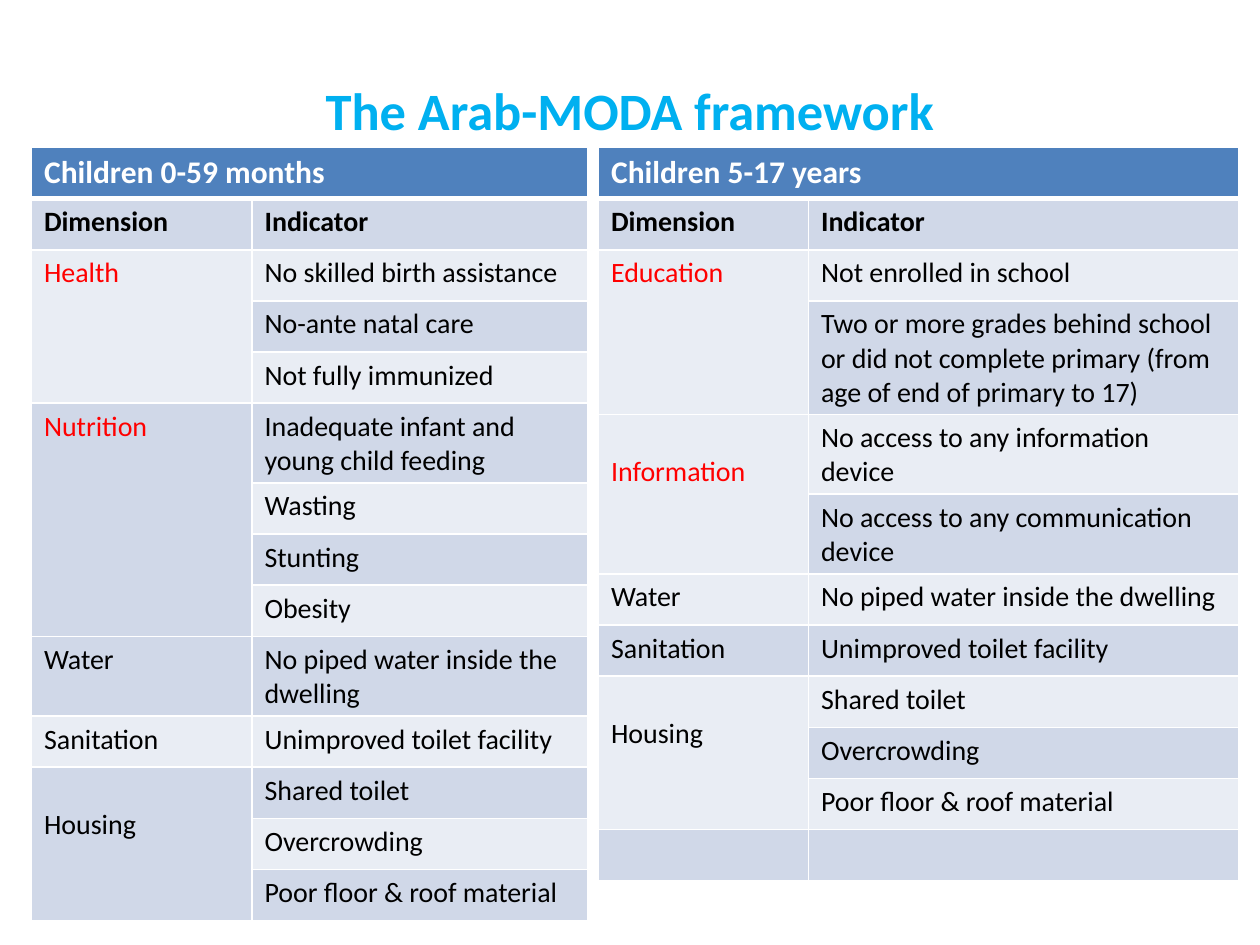
from lxml import etree
from pptx import Presentation
from pptx.dml.color import RGBColor
from pptx.enum.text import MSO_ANCHOR, PP_ALIGN
from pptx.oxml.ns import qn
from pptx.util import Pt

CENTER, LEFT = PP_ALIGN.CENTER, PP_ALIGN.LEFT
MIDDLE = MSO_ANCHOR.MIDDLE

FONT = "Calibri"
BLACK, WHITE, RED, SKY = "000000", "FFFFFF", "FF0000", "00B0F0"
HEADER_FILL = "4F81BD"
BAND_FILLS = ("E9EDF4", "D0D8E8")  # even rows, odd rows

TITLE = "The Arab-MODA framework"
COLUMN_HEADS = ("Dimension", "Indicator")
HOUSING = ["Shared toilet", "Overcrowding", "Poor floor & roof material"]
WATER = ["No piped water inside the dwelling"]
SANITATION = ["Unimproved toilet facility"]

# Each dimension: name, colour, lines it is lowered by, indicators
AGE_GROUPS = [
    {
        "heading": "Children 0-59 months",
        "left": 18, "widths": (126, 192),
        "dimensions": [
            ("Health", RED, 0, ["No skilled birth assistance",
                                "No-ante natal care",
                                "Not fully immunized"]),
            ("Nutrition", RED, 0, ["Inadequate infant and young child feeding",
                                   "Wasting", "Stunting", "Obesity"]),
            ("Water", BLACK, 0, WATER),
            ("Sanitation", BLACK, 0, SANITATION),
            ("Housing", BLACK, 1, HOUSING),
        ],
    },
    {
        "heading": "Children 5-17 years",
        "left": 342, "widths": (120, 246),
        "dimensions": [
            ("Education", RED, 0, [
                "Not enrolled in school",
                "Two or more grades behind school or did not complete "
                "primary (from age of end of primary to 17)"]),
            ("Information", RED, 1, ["No access to any information device",
                                     "No access to any communication device"]),
            ("Water", BLACK, 0, WATER),
            ("Sanitation", BLACK, 0, SANITATION),
            ("Housing", BLACK, 1, HOUSING),
            ("", BLACK, 0, [""]),
        ],
    },
]
TABLE_TOP, ROW_HEIGHT = 84.4, 29.2
CELL_MARGIN, LINE_HEIGHT = 3.6, 19.5


def rgb(hex_color):
    return RGBColor.from_string(hex_color)


def write(frame, text, size=16, color=BLACK, bold=False, align=LEFT):
    if not text:
        return
    frame.word_wrap = True
    paragraph = frame.paragraphs[0]
    paragraph.alignment = align
    run = paragraph.add_run()
    run.text = text
    run.font.name, run.font.size, run.font.bold = FONT, Pt(size), bold
    run.font.color.rgb = rgb(color)


def style_cell(cell, row):
    """White borders, thicker below the heading row, and the banded fill."""
    properties = cell._tc.get_or_add_tcPr()
    widths = {"a:lnL": 1, "a:lnR": 1, "a:lnT": 3 if row == 1 else 1,
              "a:lnB": 3 if row == 0 else 1}
    for side, width in widths.items():
        line = etree.SubElement(properties, qn(side), w=str(Pt(width)))
        paint = etree.SubElement(line, qn("a:solidFill"))
        etree.SubElement(paint, qn("a:srgbClr"), val=WHITE)
    cell.fill.solid()
    cell.fill.fore_color.rgb = rgb(HEADER_FILL if row == 0 else BAND_FILLS[row % 2])


def add_age_group(slide, group):
    widths, dimensions = group["widths"], group["dimensions"]
    row_count = 2 + sum(len(indicators) for *_, indicators in dimensions)
    table = slide.shapes.add_table(
        row_count, 2, Pt(group["left"]), Pt(TABLE_TOP),
        Pt(sum(widths)), Pt(ROW_HEIGHT * row_count)).table
    for column, width in zip(table.columns, widths):
        column.width = Pt(width)
    for row in range(row_count):
        table.rows[row].height = Pt(ROW_HEIGHT)
        for column in range(2):
            style_cell(table.cell(row, column), row)

    # Heading rows
    table.cell(0, 0).merge(table.cell(0, 1))
    write(table.cell(0, 0).text_frame, group["heading"], size=18, color=WHITE, bold=True)
    for column, head in enumerate(COLUMN_HEADS):
        write(table.cell(1, column).text_frame, head, bold=True)

    # Dimensions, each spanning its indicators
    row = 2
    for name, color, lowered, indicators in dimensions:
        dimension = table.cell(row, 0)
        if len(indicators) > 1:
            dimension.merge(table.cell(row + len(indicators) - 1, 0))
        dimension.margin_top = Pt(CELL_MARGIN + lowered * LINE_HEIGHT)
        write(dimension.text_frame, name, color=color)
        for indicator in indicators:
            write(table.cell(row, 1).text_frame, indicator)
            row += 1


def main():
    deck = Presentation()
    deck.slide_width, deck.slide_height = Pt(720), Pt(540)
    slide = deck.slides.add_slide(deck.slide_layouts[6])

    # Title
    title = slide.shapes.add_textbox(Pt(36), Pt(17.5), Pt(648), Pt(90)).text_frame
    title.vertical_anchor = MIDDLE
    write(title, TITLE, size=30, color=SKY, bold=True, align=CENTER)

    # One table per age group
    for group in AGE_GROUPS:
        add_age_group(slide, group)
    deck.save("out.pptx")


if __name__ == "__main__":
    main()
